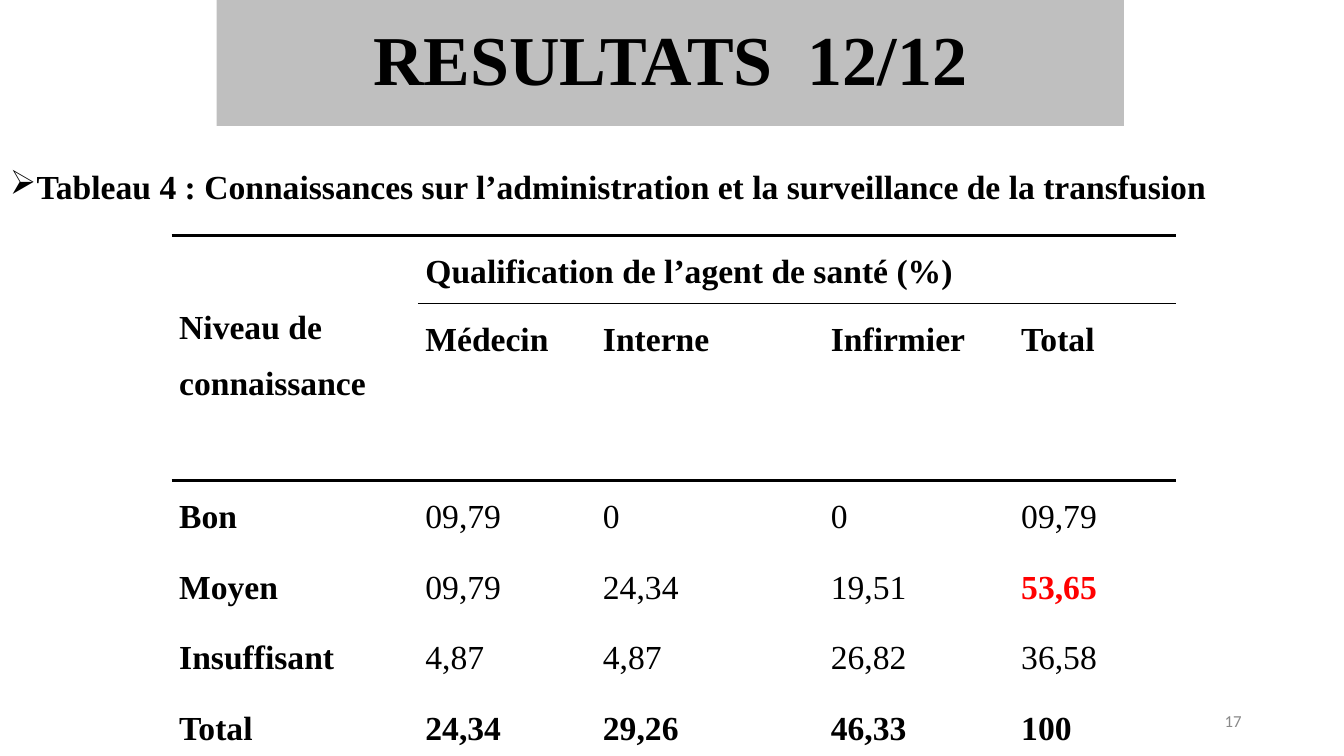
from lxml import etree
from pptx import Presentation, util as u
from pptx.dml import color
from pptx.enum import shapes, text
from pptx.oxml import ns

SERIF = "Times New Roman"
BLACK = "000000"
RED = "FF0000"
THICK, THIN = 2.25, 1
HEADINGS = ["Médecin", "Interne", "Infirmier", "Total"]
LEVELS = [
    ["Bon", "09,79", "0", "0", "09,79"],
    ["Moyen", "09,79", "24,34", "19,51", "53,65"],
    ["Insuffisant", "4,87", "4,87", "26,82", "36,58"],
    ["Total", "24,34", "29,26", "46,33", "100"],
]
COLUMN_WIDTHS = [175.9, 126.8, 162.8, 136, 115.8]
ROW_HEIGHTS = [48.6, 87.1] + [50.4] * len(LEVELS)
HIGHLIGHT = (3, 4)


def rgb(value):
    return color.RGBColor.from_string(value)


def write(frame, wording, size=24, font=SERIF, fill=BLACK, bold=False,
          align=text.PP_ALIGN.LEFT, spacing=1.0, before=0):
    frame.word_wrap = True
    paragraph = frame.paragraphs[0]
    paragraph.alignment = align
    paragraph.line_spacing = spacing
    paragraph.space_before = u.Pt(before)
    run = paragraph.add_run()
    run.text = wording
    run.font.size = u.Pt(size)
    run.font.name = font
    run.font.bold = bold
    run.font.color.rgb = rgb(fill)
    return paragraph


def add_bullet(paragraph, symbol, indent):
    properties = paragraph._p.get_or_add_pPr()
    properties.set("marL", str(u.Pt(indent)))
    properties.set("indent", str(-u.Pt(indent)))
    etree.SubElement(properties, ns.qn("a:buChar"), char=symbol)


def set_borders(cell, **widths):
    properties = cell._tc.get_or_add_tcPr()
    for position, side in enumerate(("lnL", "lnR", "lnT", "lnB")):
        width = widths.get(side, 0)
        line = etree.Element(ns.qn("a:" + side), w=str(u.Pt(width)))
        if width:
            solid = etree.SubElement(line, ns.qn("a:solidFill"))
            etree.SubElement(solid, ns.qn("a:srgbClr"), val=BLACK)
        else:
            etree.SubElement(line, ns.qn("a:noFill"))
        properties.insert(position, line)


def add_title(slide, left, top, width, height):
    banner = slide.shapes.add_shape(
        shapes.MSO_SHAPE.RECTANGLE, u.Pt(left), u.Pt(top), u.Pt(width), u.Pt(height))
    banner.shadow.inherit = False
    banner.fill.solid()
    banner.fill.fore_color.rgb = rgb("BFBFBF")
    banner.line.fill.background()
    banner.text_frame.vertical_anchor = text.MSO_ANCHOR.MIDDLE
    write(banner.text_frame, "RESULTATS  12/12", size=50, bold=True,
          align=text.PP_ALIGN.CENTER, spacing=0.9)


def add_caption(slide, left, top, width, height):
    caption = slide.shapes.add_textbox(u.Pt(left), u.Pt(top), u.Pt(width), u.Pt(height))
    paragraph = write(
        caption.text_frame,
        "Tableau 4 : Connaissances sur l’administration et la surveillance de la transfusion",
        bold=True, spacing=0.9, before=10)
    add_bullet(paragraph, "➢", 18)


def add_page_number(slide, left, top, width, height):
    number = slide.shapes.add_textbox(u.Pt(left), u.Pt(top), u.Pt(width), u.Pt(height))
    number.text_frame.vertical_anchor = text.MSO_ANCHOR.MIDDLE
    write(number.text_frame, "17", size=12, font="Calibri", fill="898989",
          align=text.PP_ALIGN.RIGHT)


def add_knowledge_table(slide, left, top, width, height):
    rows = [["Niveau de connaissance", "Qualification de l’agent de santé (%)", "", "", ""],
            [""] + HEADINGS] + LEVELS
    table = slide.shapes.add_table(
        len(rows), len(COLUMN_WIDTHS), u.Pt(left), u.Pt(top), u.Pt(width), u.Pt(height)).table
    table.first_row = table.horz_banding = False
    for column, column_width in zip(table.columns, COLUMN_WIDTHS):
        column.width = u.Pt(column_width)
    for row, row_height in zip(table.rows, ROW_HEIGHTS):
        row.height = u.Pt(row_height)
    table.cell(0, 0).merge(table.cell(1, 0))
    table.cell(0, 1).merge(table.cell(0, 3))

    last = len(rows) - 1
    rules = {0: THICK, 1: THIN, 2: THICK, last + 1: THICK}
    for r, row in enumerate(rows):
        for c, wording in enumerate(row):
            cell = table.cell(r, c)
            cell.fill.background()
            cell.margin_left = cell.margin_right = u.Pt(5.4)
            cell.margin_top = cell.margin_bottom = 0
            above, below = rules.get(r, 0), rules.get(r + 1, 0)
            if c == 0 and r < 2:
                above, below = (THICK, 0) if r else (THICK, THICK)
                above, below = (0, THICK) if r else (above, below)
            set_borders(cell, lnT=above, lnB=below)
            if wording:
                highlighted = (r, c) == HIGHLIGHT
                write(cell.text_frame, wording, spacing=1.5,
                      fill=RED if highlighted else BLACK,
                      bold=highlighted or c == 0 or r < 2 or r == last)
    table.cell(0, 0).margin_top = u.Pt(40)


def main():
    deck = Presentation()
    deck.slide_width, deck.slide_height = u.Pt(960), u.Pt(540)
    slide = deck.slides.add_slide(deck.slide_layouts[6])
    add_title(slide, 154.8, 0, 648, 90)
    add_caption(slide, 0, 118, 960, 411)
    add_page_number(slide, 678, 500.4, 216, 28.8)
    add_knowledge_table(slide, 122.6, 168, sum(COLUMN_WIDTHS), sum(ROW_HEIGHTS))
    deck.save("out.pptx")


if __name__ == "__main__":
    main()
